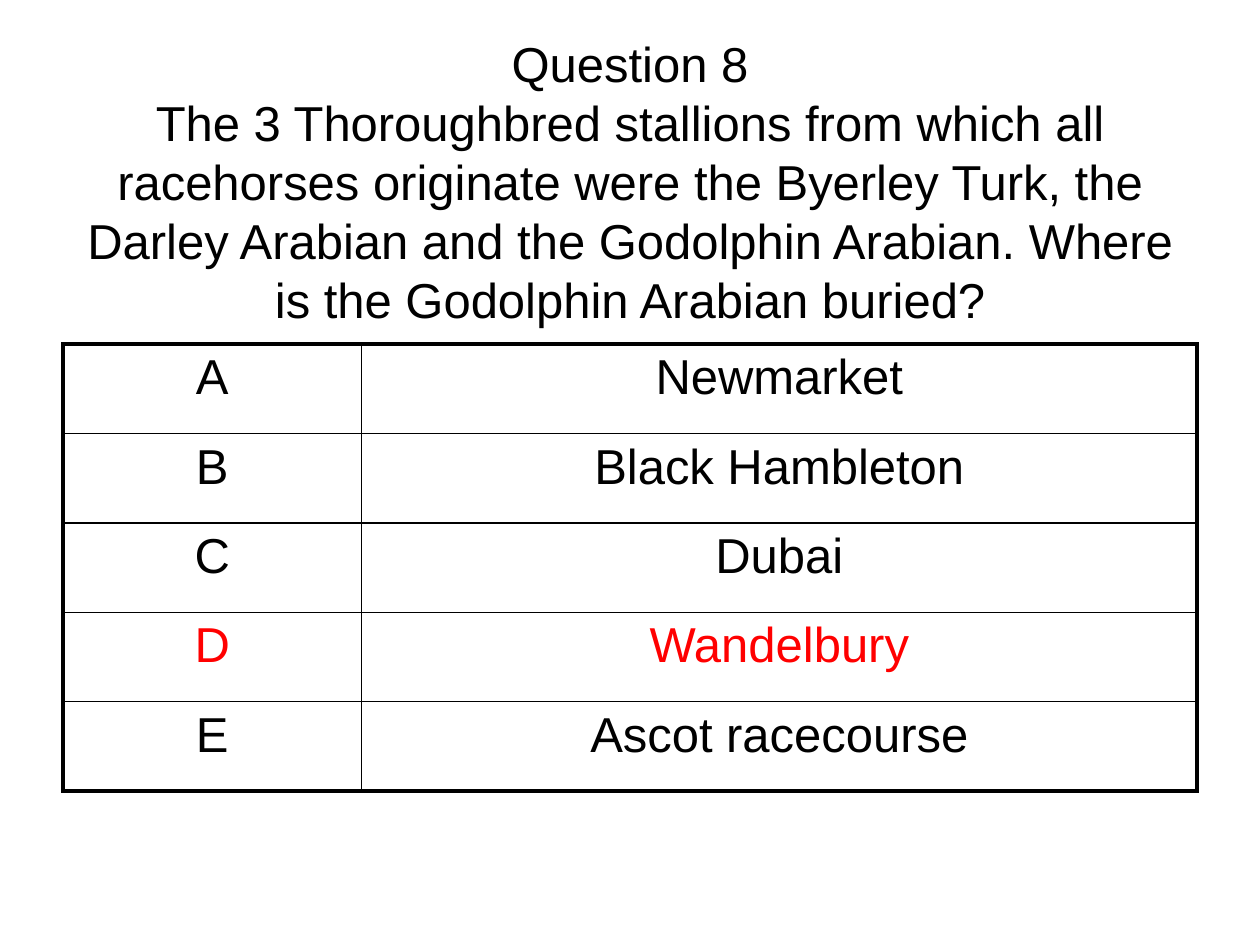
from lxml.etree import SubElement
from pptx import Presentation
from pptx.dml.color import RGBColor
from pptx.enum.text import MSO_ANCHOR, PP_ALIGN
from pptx.oxml.ns import qn
from pptx.util import Inches, Pt

HEADING = "Question 8"
QUESTION = (
    "The 3 Thoroughbred stallions from which all racehorses originate were "
    "the Byerley Turk, the Darley Arabian and the Godolphin Arabian. "
    "Where is the Godolphin Arabian buried?"
)
ANSWERS = [
    ("A", "Newmarket"),
    ("B", "Black Hambleton"),
    ("C", "Dubai"),
    ("D", "Wandelbury"),
    ("E", "Ascot racecourse"),
]
CORRECT = "D"

COLORS = {"text": "000000", "correct": "FF0000", "border": "000000"}
FONT, SIZE = "Arial", Pt(28)
OUTER, INNER = Pt(2.25), Pt(1)

SLIDE_W, SLIDE_H = Inches(10), Inches(7.5)
MARGIN = int(SLIDE_W * 0.05)
CONTENT_W = SLIDE_W - 2 * MARGIN
TITLE_TOP, TITLE_H = Inches(0.3), Inches(2.27)
TABLE_TOP, ROW_H = Inches(2.73), Inches(0.71)
LETTER_W = Inches(2.37)


def style(paragraph, color):
    paragraph.alignment = PP_ALIGN.CENTER
    font = paragraph.font
    font.name, font.size = FONT, SIZE
    font.color.rgb = RGBColor.from_string(COLORS[color])


def set_borders(cell, widths):
    """Draw solid borders; widths are left, right, top, bottom."""
    properties = cell._tc.get_or_add_tcPr()
    for position, (side, width) in enumerate(zip("LRTB", widths)):
        line = properties.makeelement(qn(f"a:ln{side}"), {"w": str(width)})
        properties.insert(position, line)
        fill = SubElement(line, qn("a:solidFill"))
        SubElement(fill, qn("a:srgbClr"), val=COLORS["border"])


def add_title(slide):
    frame = slide.shapes.add_textbox(MARGIN, TITLE_TOP, CONTENT_W, TITLE_H).text_frame
    frame.word_wrap = True
    frame.vertical_anchor = MSO_ANCHOR.MIDDLE
    paragraph = frame.paragraphs[0]
    style(paragraph, "text")
    paragraph.add_run().text = HEADING
    paragraph.add_line_break()
    paragraph.add_run().text = QUESTION


def add_answers(slide):
    rows, cols = len(ANSWERS), len(ANSWERS[0])
    table = slide.shapes.add_table(
        rows, cols, MARGIN, TABLE_TOP, CONTENT_W, ROW_H * rows
    ).table
    table.first_row = table.horz_banding = False
    table.columns[0].width = LETTER_W
    table.columns[1].width = CONTENT_W - LETTER_W
    for r, answer in enumerate(ANSWERS):
        table.rows[r].height = ROW_H
        color = "correct" if answer[0] == CORRECT else "text"
        for c, text in enumerate(answer):
            cell = table.cell(r, c)
            cell.text = text
            style(cell.text_frame.paragraphs[0], color)
            cell.fill.background()
            on_edge = (c == 0, c == cols - 1, r == 0, r == rows - 1)
            set_borders(cell, [OUTER if edge else INNER for edge in on_edge])


def main():
    deck = Presentation()
    deck.slide_width, deck.slide_height = SLIDE_W, SLIDE_H
    slide = deck.slides.add_slide(deck.slide_layouts[6])
    add_title(slide)
    add_answers(slide)
    deck.save("out.pptx")


if __name__ == "__main__":
    main()
